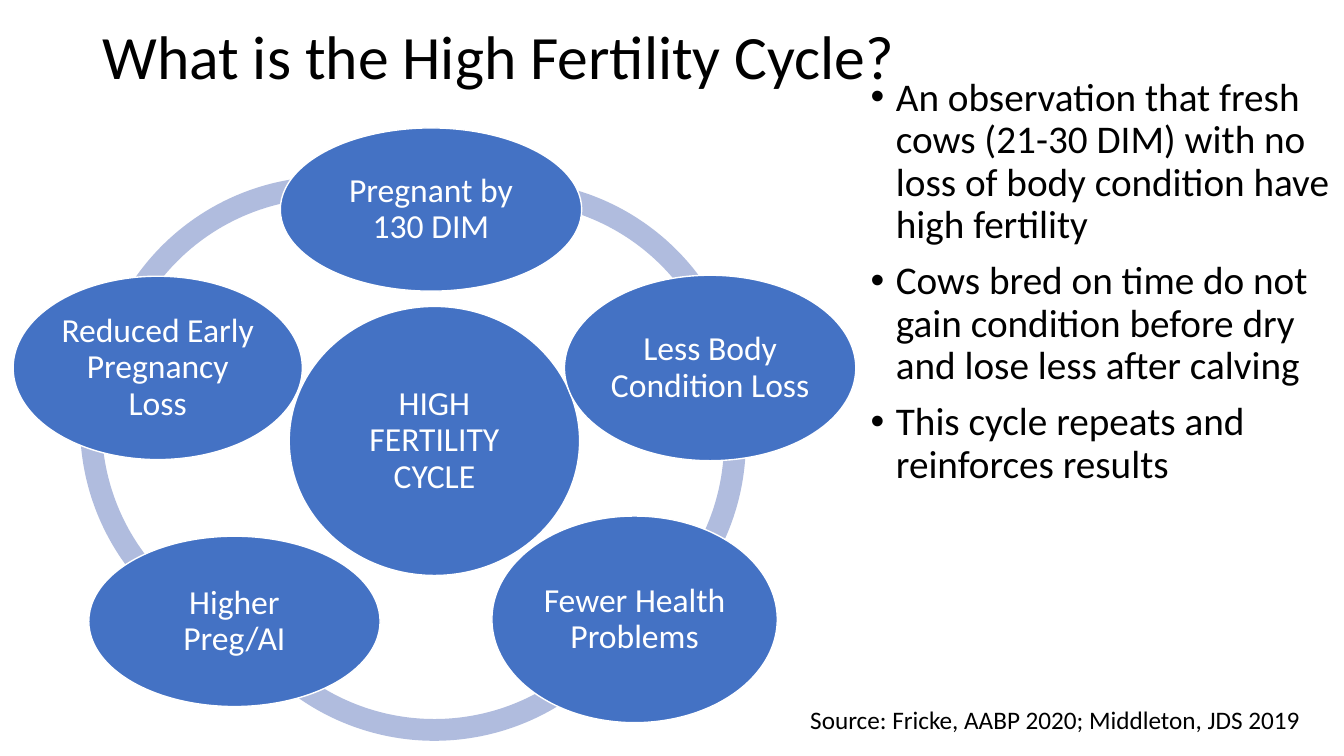
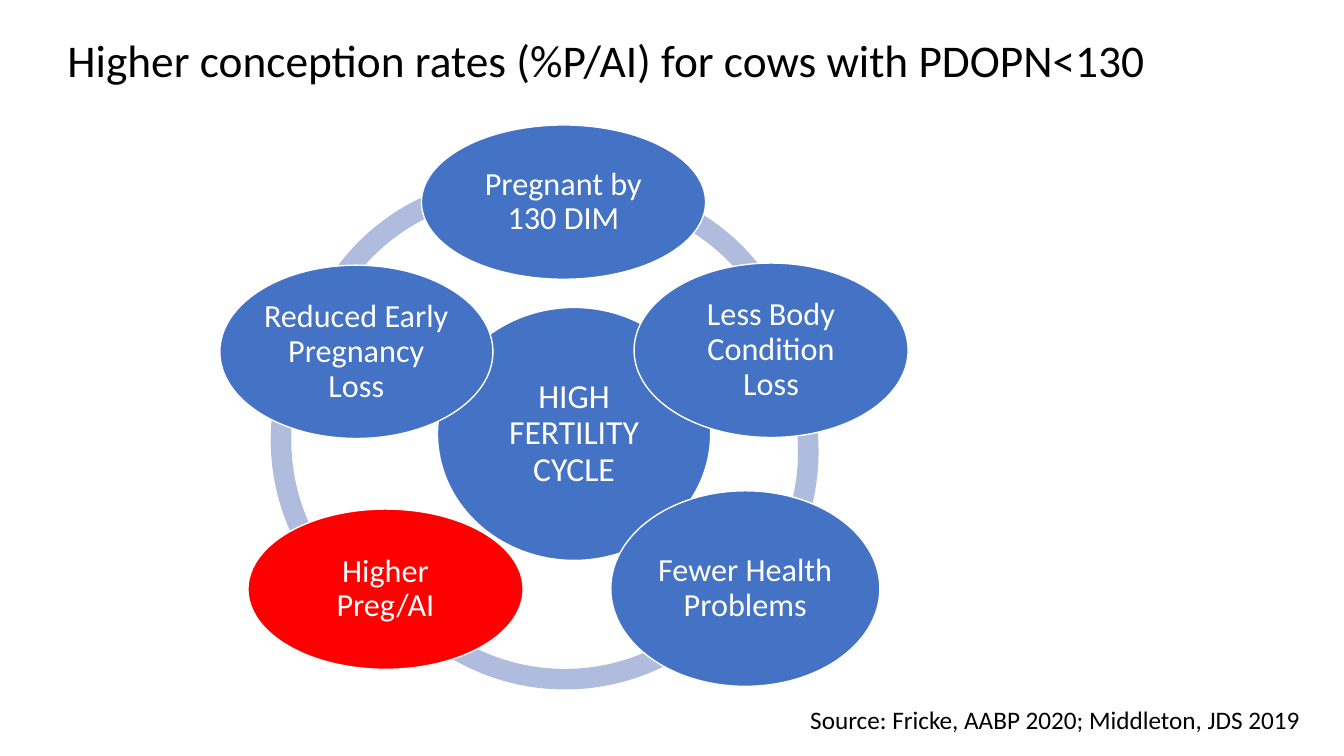
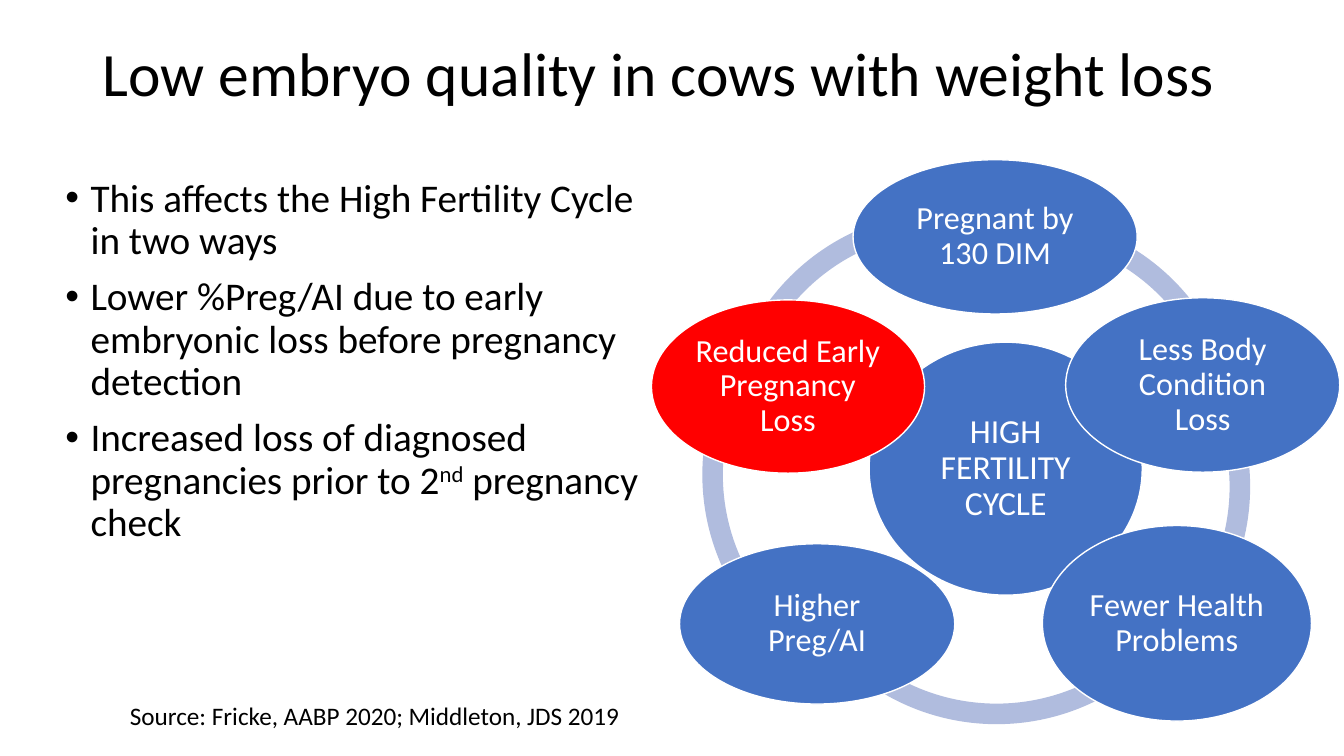
import pptx
import pptx.util
import pptx.dml.color
import pptx.enum.shapes
import pptx.enum.text
import pptx.oxml.ns
import lxml.etree

Pt = pptx.util.Pt
SHAPE = pptx.enum.shapes.MSO_SHAPE
ALIGN = pptx.enum.text.PP_ALIGN
ANCHOR = pptx.enum.text.MSO_ANCHOR

# Shared style
FONT = "Calibri"
BLACK, WHITE, BLUE, RED, RING = "000000", "FFFFFF", "4472C4", "FF0000", "B0BCDE"
RING_THICKNESS = 0.046
BULLET_INDENT = 18
SOURCE = "Source: Fricke, AABP 2020; Middleton, JDS 2019"
SOURCE_SIZE = (369.4, 28.8)

# Cycle content: hub first, then clockwise from the top
STAGES = ["HIGH FERTILITY CYCLE", "Pregnant by 130 DIM", "Less Body Condition Loss",
          "Fewer Health Problems", "Higher Preg/AI", "Reduced Early Pregnancy Loss"]

# Start and end angle of each ring arc, clockwise from the top stage;
# the ends lie behind the two stages that the arc joins
ARC_ANGLES = [(280, 330), (345, 30), (40, 130), (125, 195), (205, 265)]

# Arcs: left, top; ovals: left, top, width, height
WIDE_CYCLE = {
    "stage_size": 24,
    "arc_diameter": 338.4,
    "arcs": [(194.4, 128.9), (194.4, 146.2), (141.1, 190.8), (57.2, 134.4), (66.2, 126)],
    "ovals": [
        (206.6, 218.9, 207.4, 192.2), (200.2, 91.4, 215.3, 116.6),
        (403.2, 196.6, 208.1, 132.5), (351.4, 368.6, 203.8, 147.6),
        (63.4, 383, 208.1, 121.7), (9.4, 197.3, 206.6, 131),
    ],
}
COMPACT_CYCLE = {
    "stage_size": 23,
    "arc_diameter": 319,
    "arcs": [(257.8, 128.9), (265.7, 163.4), (244.1, 173.5), (193.4, 154.8), (209.5, 126)],
    "ovals": [
        (312.5, 219.6, 195.1, 180.7), (301, 89.3, 203, 110.2),
        (452.9, 187.9, 195.8, 124.6), (436.3, 350.6, 192.2, 139.7),
        (177.1, 363.6, 196.6, 114.5), (157, 189.4, 195.1, 123.8),
    ],
}

# Slides; ^ marks the start and end of a superscript
SLIDES = [
    {
        "title": "What is the High Fertility Cycle?",
        "title_box": (66, 6.5, 828, 72.7), "title_size": 44,
        "cycle": WIDE_CYCLE, "shift": (0, 0), "highlight": None,
        "points": [
            "An observation that fresh cows (21-30 DIM) with no loss of body condition "
            "have high fertility",
            "Cows bred on time do not gain condition before dry and lose less after calving",
            "This cycle repeats and reinforces results",
        ],
        "points_box": (614.9, 51.8, 345.6, 404.6),
        "source_at": (571.7, 499.7),
    },
    {
        "title": "Higher conception rates (%P/AI) for cows with PDOPN<130",
        "title_box": (41, 4.3, 828, 80.6), "title_size": 32.4,
        "cycle": COMPACT_CYCLE, "shift": (0, 0), "highlight": "Higher Preg/AI",
        "points": [], "points_box": None,
        "source_at": (571.7, 499.7),
    },
    {
        "title": "Low embryo quality in cows with weight loss",
        "title_box": (66, 2.2, 828, 104.4), "title_size": 44,
        "cycle": COMPACT_CYCLE, "shift": (308.3, 24.8),
        "highlight": "Reduced Early Pregnancy Loss",
        "points": [
            "This affects the High Fertility Cycle in two ways",
            "Lower %Preg/AI due to early embryonic loss before pregnancy detection",
            "Increased loss of diagnosed pregnancies prior to 2^nd^ pregnancy check",
        ],
        "points_box": (39.6, 123.8, 425.5, 342.7),
        "source_at": (85.7, 496.8),
    },
]


def rgb(hex_code):
    return pptx.dml.color.RGBColor.from_string(hex_code)


def add_bullet(paragraph):
    properties = paragraph._p.get_or_add_pPr()
    properties.set("marL", str(Pt(BULLET_INDENT)))
    properties.set("indent", str(-Pt(BULLET_INDENT)))
    for tag, key, value in (("a:buFont", "typeface", "Arial"), ("a:buChar", "char", "•")):
        mark = lxml.etree.SubElement(properties, pptx.oxml.ns.qn(tag))
        mark.set(key, value)


def write(frame, *paragraphs, size, color=BLACK, align=ALIGN.LEFT, anchor=ANCHOR.TOP,
          line_spacing=0.9, space_before=0, bullets=False, inset=None):
    """Fill a text frame, one paragraph for each string."""
    frame.word_wrap = True
    frame.auto_size = pptx.enum.text.MSO_AUTO_SIZE.NONE
    frame.vertical_anchor = anchor
    if inset is not None:
        frame.margin_left = frame.margin_right = Pt(inset)
        frame.margin_top = frame.margin_bottom = Pt(inset)
    for number, text in enumerate(paragraphs):
        paragraph = frame.add_paragraph() if number else frame.paragraphs[0]
        paragraph.alignment = align
        paragraph.line_spacing = line_spacing
        paragraph.space_before = Pt(space_before)
        if bullets:
            add_bullet(paragraph)
        for position, piece in enumerate(text.split("^")):
            run = paragraph.add_run()
            run.text = piece
            run.font.name = FONT
            run.font.size = Pt(size)
            run.font.color.rgb = rgb(color)
            if position % 2:
                run._r.get_or_add_rPr().set("baseline", "30000")


def add_filled(shapes, kind, box, fill, outline=None):
    shape = shapes.add_shape(kind, *map(Pt, box))
    shape.shadow.inherit = False
    shape.fill.solid()
    shape.fill.fore_color.rgb = rgb(fill)
    if outline:
        shape.line.color.rgb = rgb(outline)
        shape.line.width = Pt(1)
    else:
        shape.line.fill.background()
    return shape


def add_cycle(slide, cycle, shift, highlight):
    shapes = slide.shapes.add_group_shape().shapes
    dx, dy = shift
    # Ring behind the stages
    diameter = cycle["arc_diameter"]
    for (left, top), (start, end) in zip(cycle["arcs"], ARC_ANGLES):
        arc = add_filled(shapes, SHAPE.BLOCK_ARC, (left + dx, top + dy, diameter, diameter), RING)
        # Angles are stored in 60000ths of a degree, adjustments in 100000ths
        arc.adjustments[0] = start * 0.6
        arc.adjustments[1] = end * 0.6
        arc.adjustments[2] = RING_THICKNESS
    # Hub and stages
    for number, (stage, box) in enumerate(zip(STAGES, cycle["ovals"])):
        left, top, width, height = box
        oval = add_filled(shapes, SHAPE.OVAL, (left + dx, top + dy, width, height),
                          RED if stage == highlight else BLUE, outline=WHITE)
        write(oval.text_frame, stage, size=cycle["stage_size"] if number else 24,
              color=WHITE, align=ALIGN.CENTER, anchor=ANCHOR.MIDDLE, inset=2.2)


def add_slide(deck, content):
    slide = deck.slides.add_slide(deck.slide_layouts.get_by_name("Title Only"))
    # Title
    title = slide.shapes.title
    title.left, title.top, title.width, title.height = map(Pt, content["title_box"])
    write(title.text_frame, content["title"], size=content["title_size"],
          anchor=ANCHOR.MIDDLE)
    # Cycle diagram
    add_cycle(slide, content["cycle"], content["shift"], content["highlight"])
    # Points
    if content["points"]:
        points = slide.shapes.add_textbox(*map(Pt, content["points_box"]))
        write(points.text_frame, *content["points"], size=28, space_before=10, bullets=True)
    # Source
    source = slide.shapes.add_textbox(*map(Pt, content["source_at"] + SOURCE_SIZE))
    write(source.text_frame, SOURCE, size=18, line_spacing=1.0)


def main():
    deck = pptx.Presentation()
    deck.slide_width, deck.slide_height = Pt(960), Pt(540)
    for content in SLIDES:
        add_slide(deck, content)
    deck.save("out.pptx")


if __name__ == "__main__":
    main()
